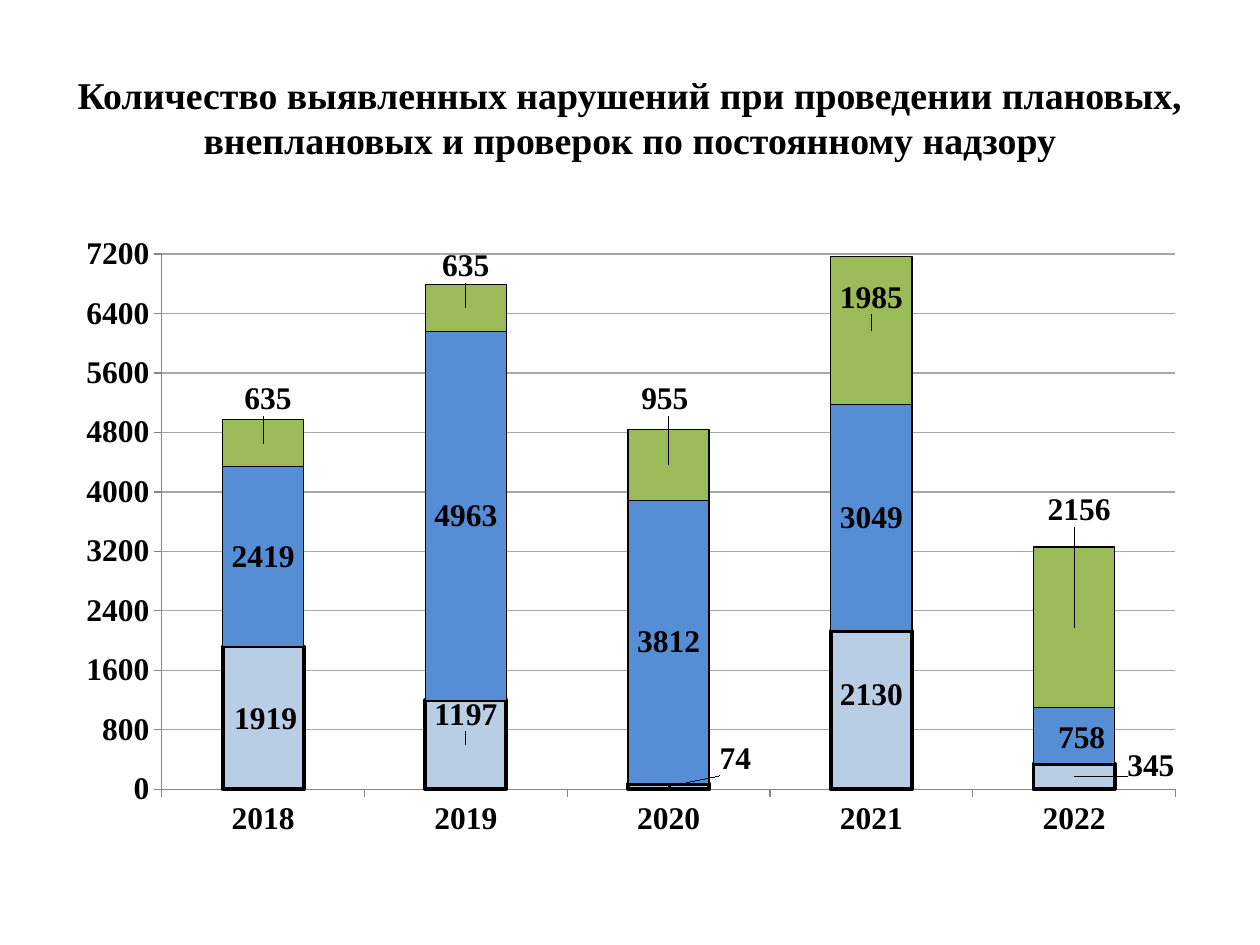
from lxml.etree import SubElement
from pptx import Presentation
from pptx.chart.data import CategoryChartData
from pptx.dml.color import RGBColor
from pptx.enum.chart import XL_CHART_TYPE as ChartType
from pptx.enum.chart import XL_LABEL_POSITION as LabelPosition
from pptx.enum.chart import XL_TICK_MARK as TickMark
from pptx.enum.text import MSO_ANCHOR as Anchor
from pptx.enum.text import PP_ALIGN as Align
from pptx.oxml import parse_xml
from pptx.oxml.ns import nsdecls, qn
from pptx.util import Inches, Pt

BLACK = RGBColor(0, 0, 0)
GRID_GRAY = RGBColor(0xA6, 0xA6, 0xA6)
AXIS_GRAY = RGBColor(0x86, 0x86, 0x86)
PALE_BLUE = RGBColor(0xB9, 0xCD, 0xE5)
BLUE = RGBColor(0x55, 0x8E, 0xD5)
GREEN = RGBColor(0x9B, 0xBB, 0x59)

WIDTH, HEIGHT = 10, 7.5
CHART_WIDTH, CHART_HEIGHT = 9, 4.95

YEARS = ["2018", "2019", "2020", "2021", "2022"]
# Values, fill, outline in points, label shifts from the bar centre in inches
SERIES = [
    ([1919, 1197, 74, 2130, 345], PALE_BLUE, 2.25,
     {0: (0.02, 0.01), 1: (0, -0.24), 2: (0.53, -0.22), 3: (0, -0.12), 4: (0.61, -0.08)}),
    ([2419, 4963, 3812, 3049, 758], BLUE, 0.75, {4: (0.06, 0.02)}),
    ([635, 635, 955, 1985, 2156], GREEN, 0.75,
     {0: (0.04, -0.35), 1: (0, -0.33), 2: (-0.03, -0.52), 3: (0, -0.26), 4: (0.04, -0.93)}),
]


def set_font(font, size=18, bold=True, color=BLACK, name="Times New Roman"):
    font.size, font.bold, font.name = Pt(size), bold, name
    font.color.rgb = color


def write_text(frame, text, align=Align.CENTER, anchor=Anchor.MIDDLE, **style):
    frame.word_wrap = True
    frame.vertical_anchor = anchor
    paragraph = frame.paragraphs[0]
    paragraph.alignment = align
    run = paragraph.add_run()
    run.text = text
    set_font(run.font, **style)


def make_layout(**values):
    layout = parse_xml(f"<c:layout {nsdecls('c')}><c:manualLayout/></c:layout>")
    for tag, value in values.items():
        SubElement(layout[0], qn(f"c:{tag}")).set("val", str(value))
    return layout


def set_line(line, color, width):
    line.color.rgb = color
    line.width = Pt(width)


class ChartSlide:
    def __init__(self, presentation):
        self.slide = presentation.slides.add_slide(presentation.slide_layouts[6])

    def add_title(self, text, left, top, width, height, **style):
        box = self.slide.shapes.add_textbox(*map(Inches, (left, top, width, height)))
        write_text(box.text_frame, text, **style)

    def add_stacked_chart(self, left, top, width, height):
        data = CategoryChartData()
        data.categories = YEARS
        for number, (values, *_) in enumerate(SERIES, 1):
            data.add_series(f"Series {number}", values)
        frame = self.slide.shapes.add_chart(
            ChartType.COLUMN_STACKED, *map(Inches, (left, top, width, height)), data)
        chart = frame.chart
        chart.has_legend = chart.has_title = False
        set_font(chart.font, bold=False, name="Calibri")
        plot = chart.plots[0]
        plot.gap_width, plot.overlap, plot.vary_by_categories = 150, 100, False
        self.place_plot(chart)
        self.style_axes(chart)
        for series, (_, fill, outline, shifts) in zip(plot.series, SERIES):
            series.format.fill.solid()
            series.format.fill.fore_color.rgb = fill
            set_line(series.format.line, BLACK, outline)
            self.label_series(series, shifts)

    def place_plot(self, chart):
        area = chart.plots[0]._element.getparent()
        for old in area.findall(qn("c:layout")):
            area.remove(old)
        area.insert(0, make_layout(layoutTarget="inner", xMode="edge", yMode="edge",
                                   x=0.086, y=0.048, w=0.894, h=0.858))

    def style_axes(self, chart):
        for axis in (chart.category_axis, chart.value_axis):
            set_font(axis.tick_labels.font)
            axis.major_tick_mark, axis.minor_tick_mark = TickMark.OUTSIDE, TickMark.NONE
            set_line(axis.format.line, AXIS_GRAY, 0.75)
        values = chart.value_axis
        values.minimum_scale, values.maximum_scale, values.major_unit = 0, 7200, 800
        values.has_major_gridlines = True
        set_line(values.major_gridlines.format.line, GRID_GRAY, 0.75)

    def label_series(self, series, shifts):
        labels = series.data_labels
        labels.show_value = True
        labels.position = LabelPosition.CENTER
        set_font(labels.font)
        for index, (across, down) in shifts.items():
            label = series.points[index].data_label
            label.position = LabelPosition.CENTER
            set_font(label.font)
        # Shifts are stored as shares of the chart size
        for element in labels._element.findall(qn("c:dLbl")):
            number = element.find(qn("c:idx"))
            across, down = shifts[int(number.get("val"))]
            number.addnext(make_layout(x=round(across / CHART_WIDTH, 4),
                                       y=round(down / CHART_HEIGHT, 4)))


presentation = Presentation()
presentation.slide_width, presentation.slide_height = Inches(WIDTH), Inches(HEIGHT)
page = ChartSlide(presentation)

# Heading
page.add_title("Количество выявленных нарушений при проведении плановых, "
               "внеплановых и проверок по постоянному надзору",
               0.05 * WIDTH, 0.04 * HEIGHT, 0.9 * WIDTH, HEIGHT / 6, size=21.6)

# Violations by year
page.add_stacked_chart(0.51, 1.78, CHART_WIDTH, CHART_HEIGHT)

presentation.save("out.pptx")
